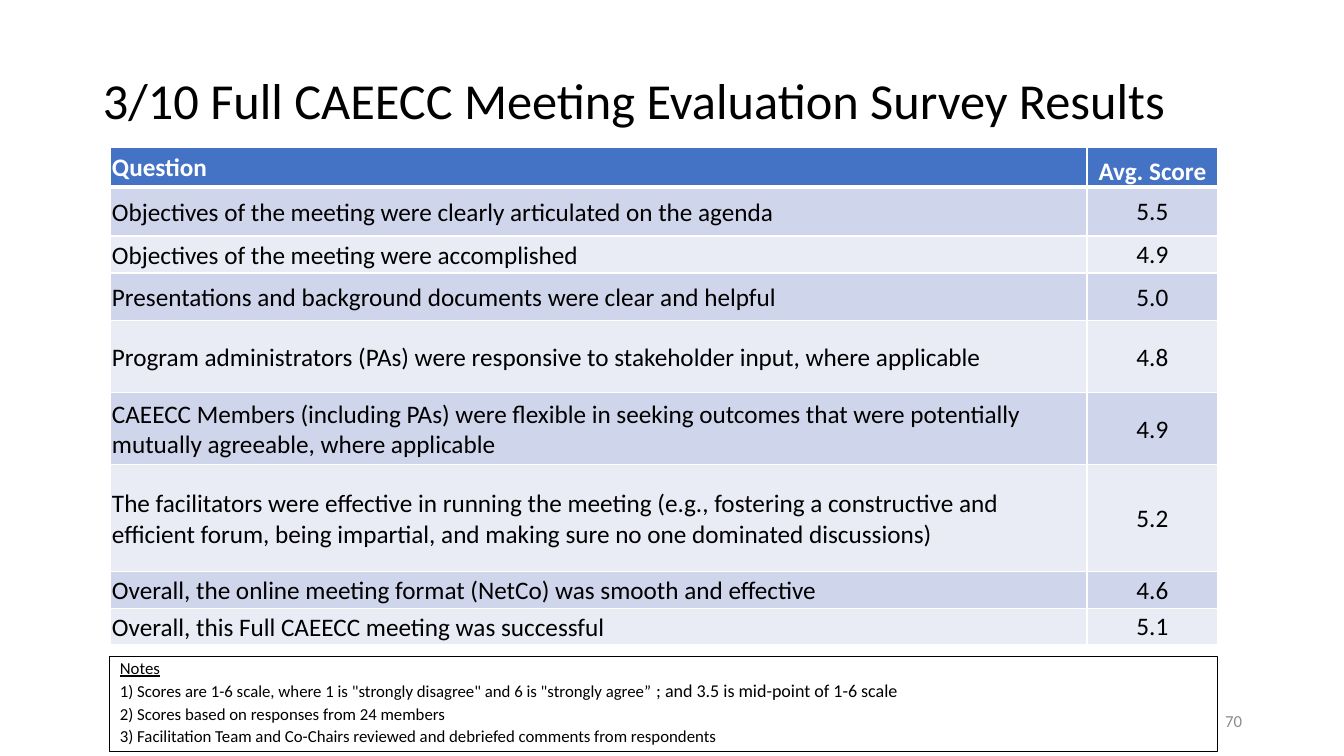
from lxml.etree import SubElement
from pptx import Presentation
from pptx.dml.color import RGBColor
from pptx.enum.shapes import MSO_SHAPE
from pptx.enum.text import MSO_ANCHOR as ANCHOR, PP_ALIGN as ALIGN
from pptx.oxml.ns import qn
from pptx.util import Emu, Pt

EMU_PER_PX = 914400 / 100.8
FONT = "Calibri"
BLACK, WHITE, GRAY = "000000", "FFFFFF", "8C8C8C"
HEADER_BLUE, BANDS = "4472C4", ("CFD5EA", "E9EBF5")

COLUMN_WIDTHS = (977, 131)
ROW_HEIGHTS = (40, 49, 37, 48, 72, 72, 107, 37, 36)
SURVEY = (
    ("Question", "Avg. Score"),
    ("Objectives of the meeting were clearly articulated on the agenda", "5.5"),
    ("Objectives of the meeting were accomplished", "4.9"),
    ("Presentations and background documents were clear and helpful", "5.0"),
    ("Program administrators (PAs) were responsive to stakeholder input, where applicable", "4.8"),
    ("CAEECC Members (including PAs) were flexible in seeking outcomes that were "
     "potentially mutually agreeable, where applicable", "4.9"),
    ("The facilitators were effective in running the meeting (e.g., fostering a "
     "constructive and efficient forum, being impartial, and making sure no one "
     "dominated discussions)", "5.2"),
    ("Overall, the online meeting format (NetCo) was smooth and effective", "4.6"),
    ("Overall, this Full CAEECC meeting was successful", "5.1"),
)
NOTES = (
    "Notes",
    '1) Scores are 1-6 scale, where 1 is "strongly disagree" and 6 is "strongly agree”',
    "2) Scores based on responses from 24 members",
    "3) Facilitation Team and Co-Chairs reviewed and debriefed comments from respondents",
)
MIDPOINT_NOTE = " ; and 3.5 is mid-point of 1-6 scale"


def px(length):
    return Emu(round(length * EMU_PER_PX))


def rgb(color):
    return RGBColor.from_string(color)


def style_text(frame, size, color, align=ALIGN.LEFT, bold=False):
    for paragraph in frame.paragraphs:
        paragraph.alignment = align
        for run in paragraph.runs:
            run.font.name = FONT
            run.font.size = Pt(size)
            run.font.bold = bold
            run.font.color.rgb = rgb(color)


def add_label(slide, text, box, size, color, align=ALIGN.LEFT):
    frame = slide.shapes.add_textbox(*map(px, box)).text_frame
    frame.word_wrap = True
    frame.vertical_anchor = ANCHOR.MIDDLE
    frame.text = text
    style_text(frame, size, color, align)
    return frame


def add_borders(cell, bottom_width):
    properties = cell._tc.get_or_add_tcPr()
    for index, side in enumerate(("lnL", "lnR", "lnT", "lnB")):
        width = bottom_width if side == "lnB" else 1
        line = SubElement(properties, qn(f"a:{side}"), w=str(Pt(width)))
        fill = SubElement(line, qn("a:solidFill"))
        SubElement(fill, qn("a:srgbClr"), val=WHITE)
        properties.insert(index, line)


def fill_cell(cell, text, is_header, is_score, color):
    cell.text = text
    cell.fill.solid()
    cell.fill.fore_color.rgb = rgb(color)
    inset = px(1 if is_score else 2)
    cell.margin_left = cell.margin_right = cell.margin_top = inset
    cell.margin_bottom = 0
    cell.vertical_anchor = ANCHOR.BOTTOM if is_header and is_score else ANCHOR.MIDDLE
    style_text(cell.text_frame, 18, WHITE if is_header else BLACK,
               ALIGN.CENTER if is_score else ALIGN.LEFT, is_header)
    add_borders(cell, 3 if is_header else 1)


def add_survey_table(slide, left, top):
    size = (sum(COLUMN_WIDTHS), sum(ROW_HEIGHTS))
    table = slide.shapes.add_table(len(SURVEY), len(COLUMN_WIDTHS),
                                   *map(px, (left, top, *size))).table
    for column, width in zip(table.columns, COLUMN_WIDTHS):
        column.width = px(width)
    for row, height in zip(table.rows, ROW_HEIGHTS):
        row.height = px(height)
    for r, entry in enumerate(SURVEY):
        color = BANDS[(r - 1) % 2] if r else HEADER_BLUE
        for c, text in enumerate(entry):
            fill_cell(table.cell(r, c), text, r == 0, c == 1, color)


def add_notes_box(slide, box):
    notes = slide.shapes.add_shape(MSO_SHAPE.RECTANGLE, *map(px, box))
    notes.shadow.inherit = False
    notes.fill.background()
    notes.line.color.rgb = rgb(BLACK)
    notes.line.width = Pt(0.75)
    frame = notes.text_frame
    frame.word_wrap = True
    frame.vertical_anchor = ANCHOR.MIDDLE
    frame.text = "\n".join(NOTES)
    heading, scale_note = frame.paragraphs[:2]
    midpoint = scale_note.add_run()
    midpoint.text = MIDPOINT_NOTE
    style_text(frame, 12, BLACK)
    midpoint.font.size = Pt(12.9)
    heading.runs[0].font.underline = True
    for paragraph in frame.paragraphs:
        paragraph.line_spacing = 0.7
        paragraph.space_after = Pt(6)


def main():
    deck = Presentation()
    deck.slide_width, deck.slide_height = px(1344), px(756)
    slide = deck.slides.add_slide(deck.slide_layouts[6])

    # Title and page number
    title = add_label(slide, "3/10 Full CAEECC Meeting Evaluation Survey Results",
                      (93, 20, 1159, 166), 36, BLACK)
    title.paragraphs[0].line_spacing = 0.9
    page = add_label(slide, "70", (950, 701, 302, 40), 12, GRAY, ALIGN.RIGHT)
    page.paragraphs[0].space_after = Pt(6)

    # Notes below the scores
    add_notes_box(slide, (110, 657, 1108, 95))

    # Survey scores
    add_survey_table(slide, 110, 147)

    deck.save("out.pptx")


if __name__ == "__main__":
    main()
